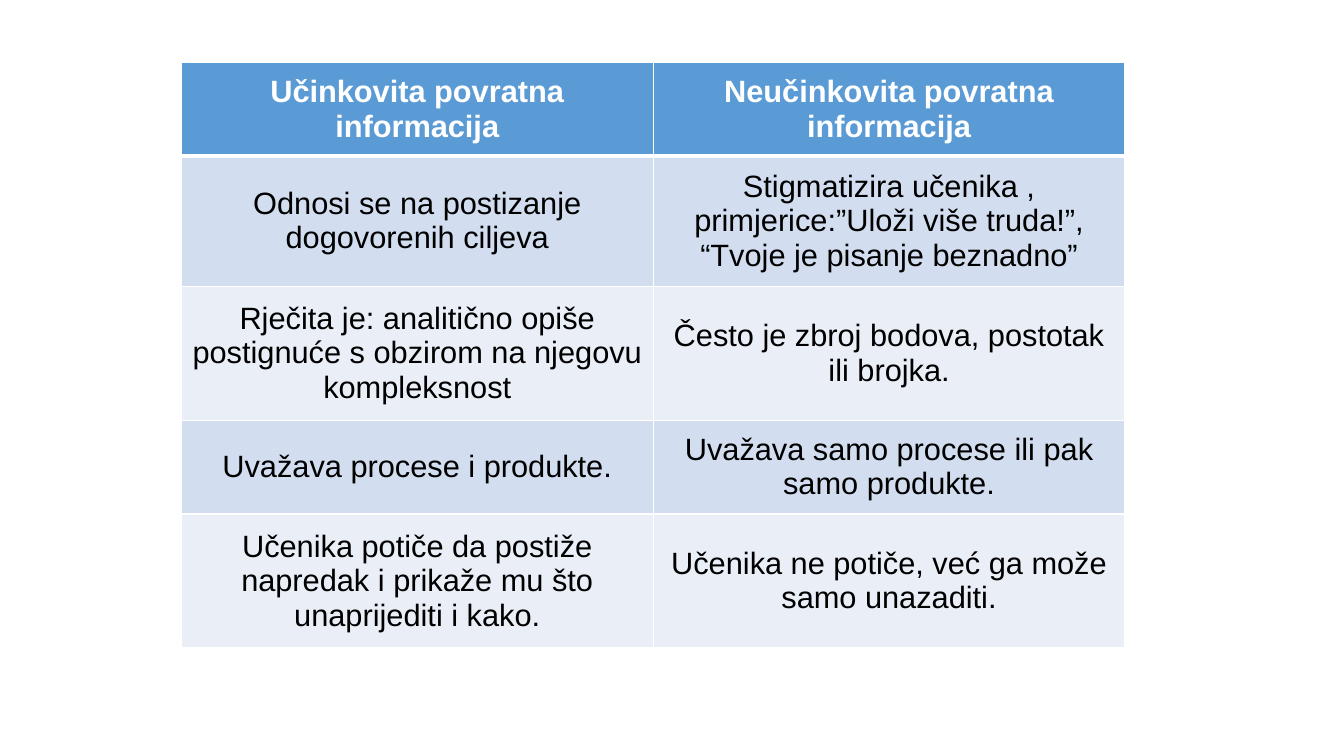
from dataclasses import dataclass

from lxml.etree import SubElement
from pptx import Presentation
from pptx.dml.color import RGBColor
from pptx.enum.text import MSO_ANCHOR, PP_ALIGN
from pptx.oxml.ns import qn
from pptx.util import Cm, Pt


@dataclass(frozen=True)
class Theme:
    font: str = "Arial"
    size: int = 22
    header: str = "5B9BD5"
    bands: tuple[str, str] = ("D2DEEF", "EAEFF7")
    header_text: str = "FFFFFF"
    body_text: str = "000000"
    border: str = "FFFFFF"
    thin: int = 1
    thick: int = 3


@dataclass(frozen=True)
class Comparison:
    effective: str
    ineffective: str
    height: float


THEME = Theme()
COLUMN_WIDTH = 11.89
ROWS = [
    Comparison("Učinkovita povratna informacija",
               "Neučinkovita povratna informacija", 2.36),
    Comparison("Odnosi se na postizanje dogovorenih ciljeva",
               "Stigmatizira učenika , primjerice:”Uloži više truda!”, "
               "“Tvoje je pisanje beznadno”", 3.28),
    Comparison("Rječita je: analitično opiše postignuće s obzirom na njegovu "
               "kompleksnost", "Često je zbroj bodova, postotak ili brojka.", 3.38),
    Comparison("Uvažava procese i produkte.",
               "Uvažava samo procese ili pak samo produkte.", 2.36),
    Comparison("Učenika potiče da postiže napredak i prikaže mu što "
               "unaprijediti i kako.",
               "Učenika ne potiče, već ga može samo unazaditi.", 3.38),
]


def set_borders(cell, row: int) -> None:
    """Thin white lines, with a thick one between header and body."""
    tc_pr = cell._tc.get_or_add_tcPr()
    thick_side = {0: "lnB", 1: "lnT"}.get(row)
    for side in ("lnL", "lnR", "lnT", "lnB"):
        width = THEME.thick if side == thick_side else THEME.thin
        ln = SubElement(tc_pr, qn(f"a:{side}"), w=str(Pt(width)))
        fill = SubElement(ln, qn("a:solidFill"))
        SubElement(fill, qn("a:srgbClr"), val=THEME.border)


def fill_cell(cell, text: str, row: int) -> None:
    is_header = row == 0
    set_borders(cell, row)
    cell.fill.solid()
    cell.fill.fore_color.rgb = RGBColor.from_string(
        THEME.header if is_header else THEME.bands[(row - 1) % 2])
    cell.vertical_anchor = MSO_ANCHOR.MIDDLE
    p = cell.text_frame.paragraphs[0]
    p.alignment = PP_ALIGN.CENTER
    r = p.add_run()
    r.text = text
    r.font.name = THEME.font
    r.font.size = Pt(THEME.size)
    r.font.bold = is_header
    r.font.color.rgb = RGBColor.from_string(
        THEME.header_text if is_header else THEME.body_text)


def add_comparison_table(s, rows: list[Comparison]) -> None:
    table = s.shapes.add_table(
        len(rows), 2, Cm(4.57), Cm(1.57), Cm(2 * COLUMN_WIDTH),
        Cm(sum(row.height for row in rows))).table
    for column in table.columns:
        column.width = Cm(COLUMN_WIDTH)
    for i, row in enumerate(rows):
        table.rows[i].height = Cm(row.height)
        for j, text in enumerate((row.effective, row.ineffective)):
            fill_cell(table.cell(i, j), text, i)


def main() -> None:
    prs = Presentation()
    prs.slide_width, prs.slide_height = Cm(33.87), Cm(19.05)
    # Blank layout: the table is the whole slide
    s = prs.slides.add_slide(prs.slide_layouts[6])
    add_comparison_table(s, ROWS)
    prs.save("out.pptx")


if __name__ == "__main__":
    main()
